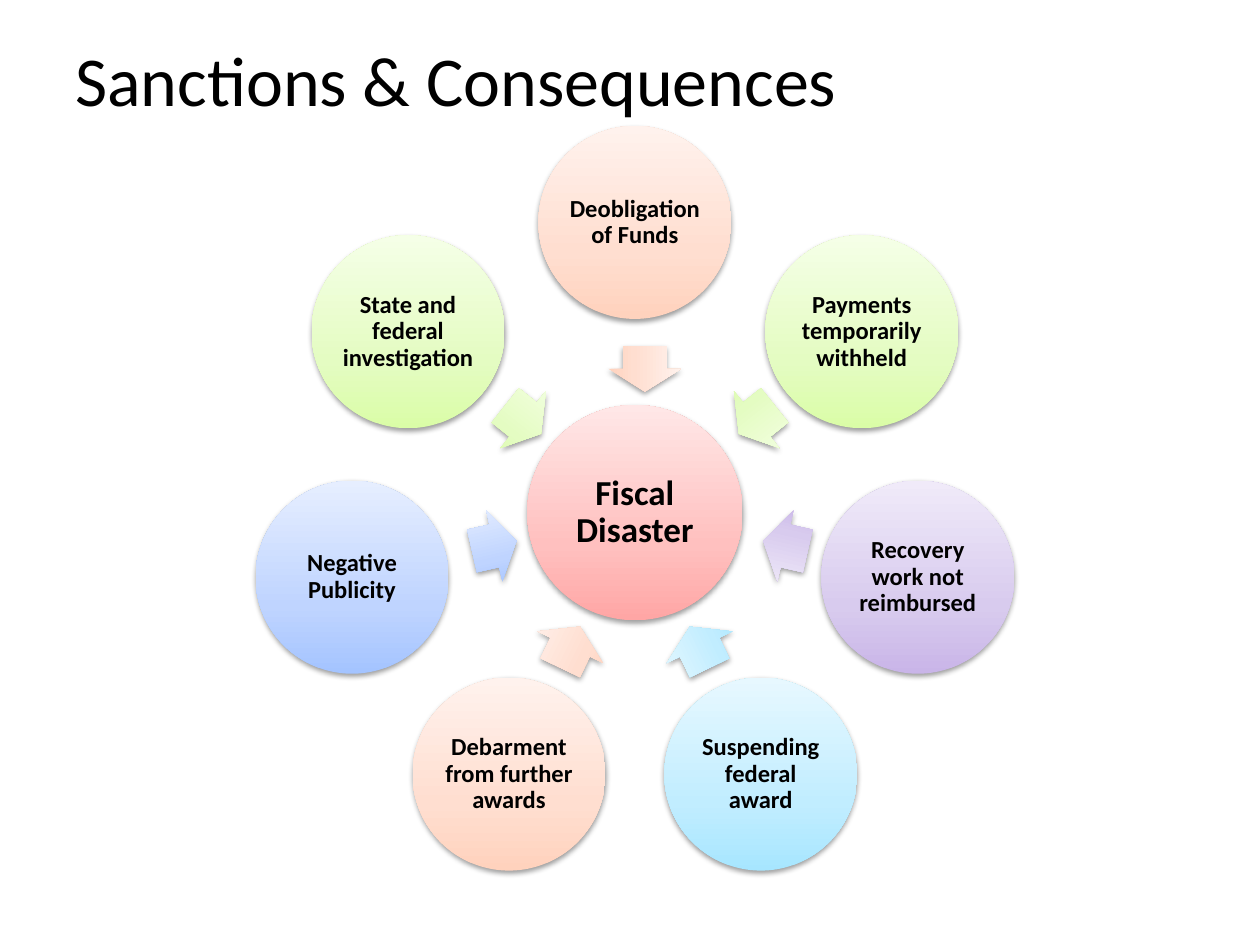
from math import cos, radians, sin

from lxml import etree
from pptx import Presentation
from pptx.dml.color import RGBColor
from pptx.enum.shapes import MSO_SHAPE as Shape
from pptx.enum.text import MSO_ANCHOR as Anchor, PP_ALIGN as Align
from pptx.oxml import parse_xml
from pptx.oxml.ns import nsdecls, qn
from pptx.util import Cm, Pt

FONT = "Calibri"
BLACK = RGBColor(0x00, 0x00, 0x00)


def shades(*codes):
    return [RGBColor.from_string(code) for code in codes]


# Each gradient runs from the bottom of its shape to the top.
RED = shades("FFA6A5", "FFC0BF", "FFE7E7")
ORANGE = shades("FFD2BD", "FFDED0", "FFF2ED")
GREEN = shades("DAFDA7", "E4FCC2", "F5FFE7")
PURPLE = shades("C9B5E8", "D8CBEE", "F0EAF9")
CYAN = shades("A7E6FF", "C1EDFF", "E7F8FF")
BLUE = shades("A4C4FF", "BFD4FF", "E6EEFF")
STOPS = (0, 35, 100)

# Sizes in centimetres
HUB, DISC, DISC_ORBIT = 4.34, 3.89, 5.85
ARROW_LENGTH, ARROW_WIDTH, ARROW_ORBIT = 0.92, 1.47, 3.01

# Label, gradient, shift of the arrow from its orbit; clockwise from the top
CONSEQUENCES = [
    ("Deobligation of Funds", ORANGE, (0.2, 0.11)),
    ("Payments temporarily withheld", GREEN, (0.1, 0)),
    ("Recovery work not reimbursed", PURPLE, (0.1, 0)),
    ("Suspending federal award", CYAN, (0, 0)),
    ("Debarment from further awards", ORANGE, (0, 0)),
    ("Negative Publicity", BLUE, (0.1, 0)),
    ("State and federal investigation", GREEN, (0.1, 0)),
]


def write_text(box, text, size, bold=False, align=Align.LEFT, spacing=1.0, inset=None):
    frame = box.text_frame
    frame.word_wrap = True
    frame.vertical_anchor = Anchor.MIDDLE
    if inset is not None:
        frame.margin_left = frame.margin_right = Cm(inset)
        frame.margin_top = frame.margin_bottom = Cm(inset)
    para = frame.paragraphs[0]
    para.alignment = align
    para.line_spacing = spacing
    span = para.add_run()
    span.text = text
    span.font.name = FONT
    span.font.size = Pt(size)
    span.font.bold = bold
    span.font.color.rgb = BLACK


def add_glossy_shape(page, kind, center, width, height, colors):
    """Add a shape around its center with a vertical gradient and a soft shadow."""
    x, y = center
    shape = page.shapes.add_shape(
        kind, Cm(x - width / 2), Cm(y - height / 2), Cm(width), Cm(height))
    shape.line.fill.background()
    stops = "".join(
        f'<a:gs pos="{stop * 1000}"><a:srgbClr val="{color}"/></a:gs>'
        for stop, color in zip(STOPS, colors))
    gradient = parse_xml(
        f'<a:gradFill {nsdecls("a")} rotWithShape="1"><a:gsLst>{stops}</a:gsLst>'
        '<a:lin ang="16200000" scaled="0"/></a:gradFill>')
    properties = shape.element.spPr
    properties.find(qn("a:prstGeom")).addnext(gradient)
    effects = etree.SubElement(properties, qn("a:effectLst"))
    effects.append(parse_xml(
        f'<a:outerShdw {nsdecls("a")} blurRad="40000" dist="20000" dir="5400000" '
        'rotWithShape="0"><a:srgbClr val="000000"><a:alpha val="38000"/>'
        '</a:srgbClr></a:outerShdw>'))
    return shape


def add_disc(page, center, diameter, text, size, colors, inset):
    disc = add_glossy_shape(page, Shape.OVAL, center, diameter, diameter, colors)
    write_text(disc, text, size, bold=True, align=Align.CENTER, spacing=0.9, inset=inset)


def add_arrow(page, center, rotation, colors):
    arrow = add_glossy_shape(
        page, Shape.RIGHT_ARROW, center, ARROW_LENGTH, ARROW_WIDTH, colors)
    arrow.adjustments[0] = 0.6
    arrow.adjustments[1] = 0.5
    arrow.rotation = rotation % 360


def add_title(page, left, top, width, height):
    title = page.shapes.add_textbox(Cm(left), Cm(top), Cm(width), Cm(height))
    write_text(title, "Sanctions & Consequences", 40)


def add_wheel(page, left, top, width):
    """Draw the hub and the ring of discs whose arrows point at it."""
    hub_x = left + width / 2
    hub_y = top + DISC / 2 + DISC_ORBIT

    def on_orbit(radius, angle):
        return (hub_x + radius * sin(radians(angle)),
                hub_y - radius * cos(radians(angle)))

    add_disc(page, (hub_x, hub_y), HUB, "Fiscal Disaster", 20, RED, 0.07)
    for index, (label, colors, (shift_x, shift_y)) in enumerate(CONSEQUENCES):
        angle = 360 * index / len(CONSEQUENCES)
        x, y = on_orbit(ARROW_ORBIT, angle)
        add_arrow(page, (x + shift_x, y + shift_y), 90 + angle, colors)
        add_disc(page, on_orbit(DISC_ORBIT, angle), DISC, label, 14, colors, 0.05)


def main():
    deck = Presentation()
    deck.slide_width, deck.slide_height = Cm(25.4), Cm(19.05)
    page = deck.slides.add_slide(deck.slide_layouts[6])
    add_title(page, left=1.27, top=0, width=23.01, height=3.18)
    add_wheel(page, left=5.15, top=2.54, width=15.3)
    deck.save("out.pptx")


if __name__ == "__main__":
    main()
